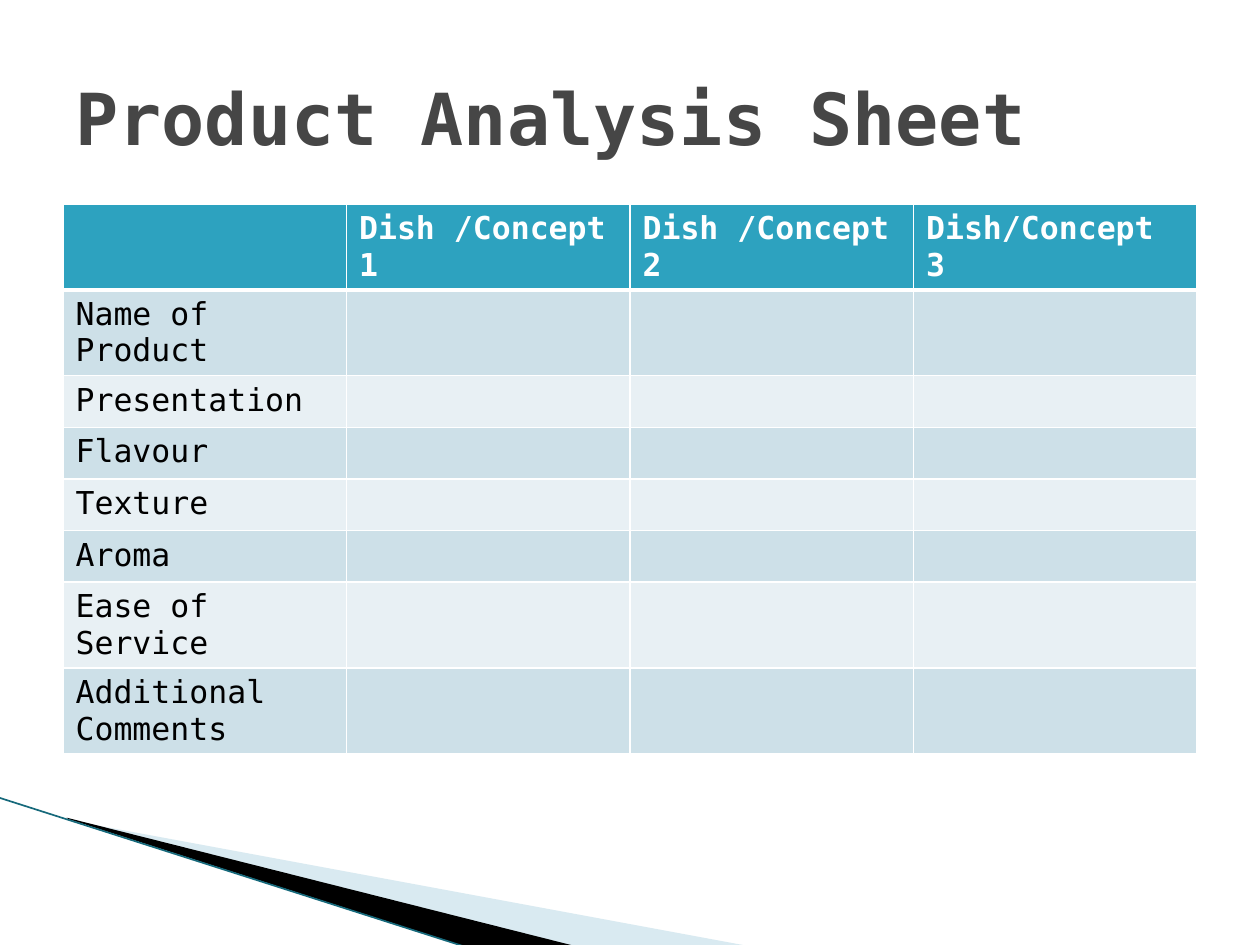
from dataclasses import dataclass

from pptx import Presentation, util as u
from pptx.dml.color import RGBColor
from pptx.enum import shapes, text
from pptx.oxml import parse_xml
from pptx.oxml.ns import nsdecls, qn


@dataclass(frozen=True)
class Theme:
    font: str = "DejaVu Sans Mono"
    title_size: float = 41
    body_size: float = 18
    title: str = "464646"
    ink: str = "000000"
    white: str = "FFFFFF"
    header: str = "2DA2BF"
    bands: tuple = ("CDE0E8", "E8F0F4")
    wedge: str = "A0CBDC"
    edge: str = "16697B"


class Sheet:
    """Holds the theme and the current slide and draws each kind of element."""

    def __init__(self, prs, theme):
        self.theme = theme
        self.s = prs.slides.add_slide(prs.slide_layouts[6])

    def add_text(self, tf, words, size, color, bold):
        r = tf.paragraphs[0].add_run()
        r.text = words
        fmt = {"name": self.theme.font, "size": u.Pt(size), "bold": bold}
        for key, value in fmt.items():
            setattr(r.font, key, value)
        r.font.color.rgb = RGBColor.from_string(color)

    def title(self, words, left, top, width, height):
        sp = self.s.shapes.add_textbox(*map(u.Inches, (left, top, width, height)))
        tf = sp.text_frame
        fmt = {"word_wrap": True, "vertical_anchor": text.MSO_ANCHOR.MIDDLE}
        for key, value in fmt.items():
            setattr(tf, key, value)
        self.add_text(tf, words, self.theme.title_size, self.theme.title, True)

    def wedge(self, points, color, opacity=100):
        start, *rest = [tuple(map(u.Inches, point)) for point in points]
        fb = self.s.shapes.build_freeform(*start)
        fb.add_line_segments(rest, close=True)
        sp = fb.convert_to_shape()
        sp.shadow.inherit = False
        sp.line.fill.background()
        sp.fill.solid()
        sp.fill.fore_color.rgb = RGBColor.from_string(color)
        if opacity < 100:
            clr = sp._element.spPr.find(qn("a:solidFill"))[0]
            clr.append(parse_xml(f'<a:alpha {nsdecls("a")} val="{opacity * 1000}"/>'))

    def line(self, begin, end, color, width):
        ends = map(u.Inches, (*begin, *end))
        cxn = self.s.shapes.add_connector(shapes.MSO_CONNECTOR.STRAIGHT, *ends)
        cxn.line.width = u.Pt(width)
        cxn.line.color.rgb = RGBColor.from_string(color)
        cxn._element.spPr.append(parse_xml(f'<a:effectLst {nsdecls("a")}/>'))

    def borders(self, cell, **widths):
        tcPr = cell._tc.get_or_add_tcPr()
        for side in "LRTB":
            tcPr.append(parse_xml(
                f'<a:ln{side} {nsdecls("a")} w="{u.Pt(widths.get(side, 1))}"><a:solidFill>'
                f'<a:srgbClr val="{self.theme.white}"/></a:solidFill></a:ln{side}>'))

    def table(self, headings, labels, left, top, width, row_height):
        t = self.theme
        rows = [headings] + [[label] + [""] * (len(headings) - 1) for label in labels]
        box = map(u.Inches, (left, top, width, row_height * len(rows)))
        tbl = self.s.shapes.add_table(len(rows), len(headings), *box).table
        for i, row in enumerate(rows):
            fill = t.bands[(i - 1) % 2] if i else t.header
            rule = {0: {"B": 3}, 1: {"T": 3}}.get(i, {})
            for j, words in enumerate(row):
                cell = tbl.cell(i, j)
                self.borders(cell, **rule)
                cell.fill.solid()
                cell.fill.fore_color.rgb = RGBColor.from_string(fill)
                if words:
                    color = t.ink if i else t.white
                    self.add_text(cell.text_frame, words, t.body_size, color, i == 0)


def main():
    prs = Presentation()
    prs.slide_width, prs.slide_height = u.Inches(10), u.Inches(7.5)
    theme = Theme()
    sheet = Sheet(prs, theme)
    sheet.wedge([(0.55, 6.51), (5.95, 7.51), (4.56, 7.51), (0.55, 6.5)], theme.wedge, 40)
    sheet.wedge([(0.53, 6.49), (4.57, 7.51), (3.72, 7.52), (0.54, 6.5)], theme.ink)
    sheet.line((-0.01, 6.33), (3.71, 7.52), theme.edge, 0.95)
    sheet.table(
        ["", "Dish /Concept 1", "Dish /Concept 2", "Dish/Concept 3"],
        ["Name of Product", "Presentation", "Flavour", "Texture", "Aroma",
         "Ease of Service", "Additional Comments"],
        0.5, 1.62, 9, 0.41)
    sheet.title("Product Analysis Sheet", 0.5, 0.3, 9, 1.25)
    prs.save("out.pptx")


if __name__ == "__main__":
    main()
